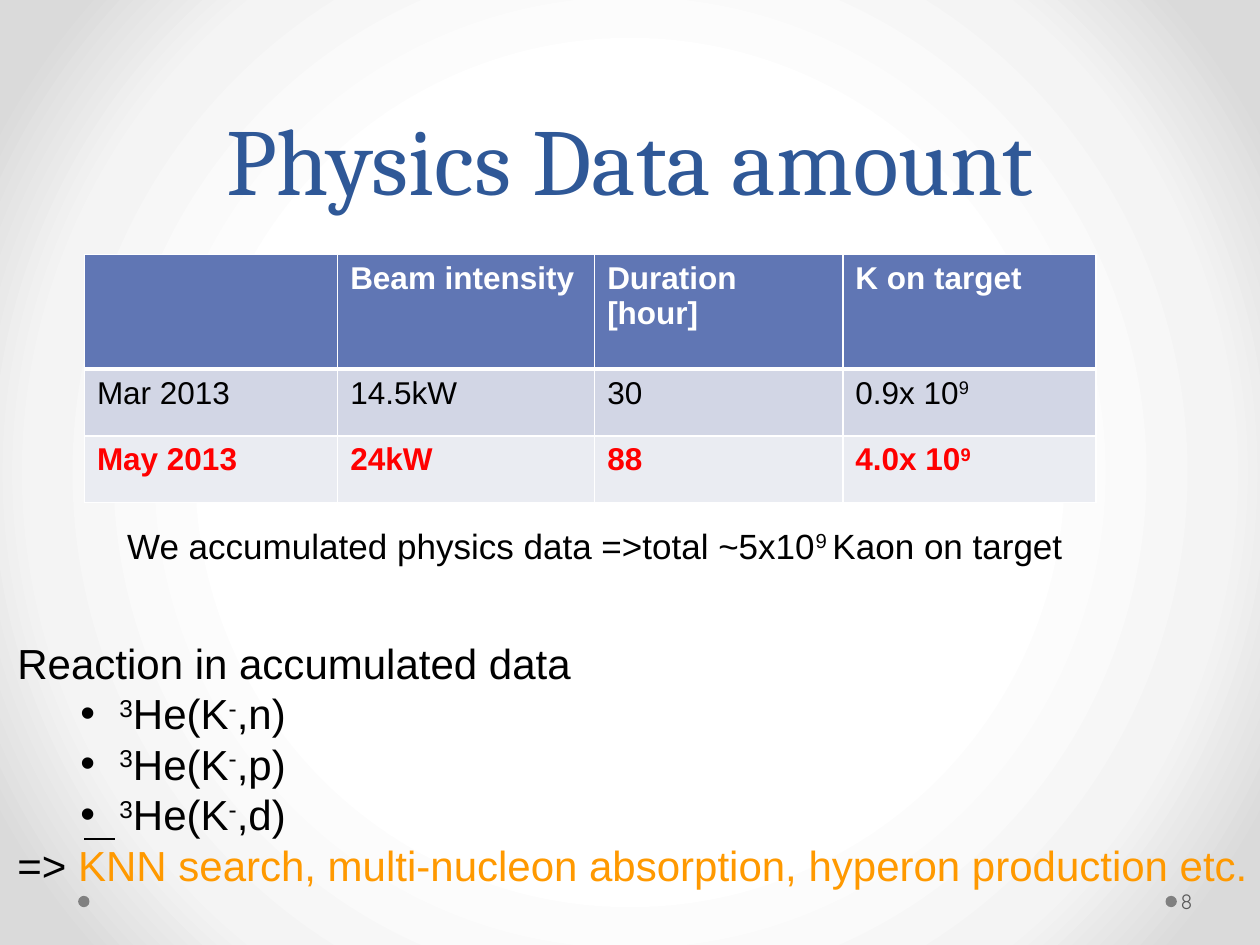
from lxml import etree
from pptx import Presentation
from pptx import util as u
from pptx.dml.color import RGBColor
from pptx.enum import shapes, text
from pptx.oxml import parse_xml
from pptx.oxml.ns import nsdecls, qn

Inches, Pt = u.Inches, u.Pt
HUE = {
    "title": "2F5897", "head": "6076B4", "odd": "D2D6E5", "even": "EAECF2",
    "white": "FFFFFF", "black": "000000", "red": "FF0000", "gold": "FF9900",
    "dot": "808080", "page": "595959", "mid": "F4F4F4", "edge": "DADADA",
}


def rgb(name):
    return RGBColor.from_string(HUE[name])


def write(para, words, size=18, font="Arial", hue="black", bold=False):
    """Add words to a paragraph; parts between ^ marks are superscript."""
    for i, part in enumerate(words.split("^")):
        if not part:
            continue
        run = para.add_run()
        run.text = part
        run.font.size, run.font.name, run.font.bold = Pt(size), font, bold
        run.font.color.rgb = rgb(hue)
        if i % 2:
            run._r.get_or_add_rPr().set("baseline", "30000")


def add_box(slide, left, top, width, height, wrap=False):
    box = slide.shapes.add_textbox(*map(Inches, (left, top, width, height)))
    frame = box.text_frame
    frame.word_wrap = wrap
    frame.auto_size = text.MSO_AUTO_SIZE.NONE if wrap else text.MSO_AUTO_SIZE.SHAPE_TO_FIT_TEXT
    return frame


def paint_back(slide):
    fill = slide.background.fill
    fill.gradient()
    stops = "".join(
        f'<a:gs pos="{pos}000"><a:srgbClr val="{HUE[name]}"/></a:gs>'
        for pos, name in ((50, "white"), (76, "mid"), (92, "edge")))
    new = parse_xml(
        f'<a:gradFill {nsdecls("a")} rotWithShape="1"><a:gsLst>{stops}</a:gsLst>'
        '<a:path path="circle"><a:fillToRect l="50000" t="50000" r="50000" b="50000"/>'
        '</a:path></a:gradFill>')
    old = next(slide._element.iter(qn("a:gradFill")))
    old.getparent().replace(old, new)


def add_dots(slide, top, size, lefts):
    for left in lefts:
        dot = slide.shapes.add_shape(
            shapes.MSO_SHAPE.OVAL, *map(Inches, (left, top, size, size)))
        dot.shadow.inherit = False
        dot.fill.solid()
        dot.fill.fore_color.rgb = rgb("dot")
        dot.line.fill.background()


def set_title(slide, words, left, top, width, height):
    title = slide.shapes.title
    title.left, title.top, title.width, title.height = map(
        Inches, (left, top, width, height))
    frame = title.text_frame
    frame.auto_size = text.MSO_AUTO_SIZE.NONE
    frame.vertical_anchor = text.MSO_ANCHOR.BOTTOM
    para = frame.paragraphs[0]
    para.alignment = text.PP_ALIGN.CENTER
    para.line_spacing = Pt(58)
    write(para, words, size=54, font="Cambria", hue="title")


def edge_cell(cell, base):
    """Draw white cell borders, with the bottom one base points wide."""
    props = cell._tc.get_or_add_tcPr()
    for i, (tag, wide) in enumerate((("lnL", 1), ("lnR", 1), ("lnT", 1), ("lnB", base))):
        props.insert(i, parse_xml(
            f'<a:{tag} {nsdecls("a")} w="{Pt(wide)}"><a:solidFill>'
            f'<a:srgbClr val="{HUE["white"]}"/></a:solidFill></a:{tag}>'))


def add_runs(slide, left, top, cols, rows):
    """Add the table of beam runs."""
    data = (
        ("", "Beam intensity", "Duration\n[hour]", "K on target"),
        ("Mar 2013", "14.5kW", "30", "0.9x 10^9^"),
        ("May 2013", "24kW", "88", "4.0x 10^9^"),
    )
    looks = (("head", "white", True), ("odd", "black", False), ("even", "red", True))
    table = slide.shapes.add_table(
        len(rows), len(cols), *map(Inches, (left, top, sum(cols), sum(rows)))).table
    for col, width in zip(table.columns, cols):
        col.width = Inches(width)
    for r, (row, high, (back, hue, bold)) in enumerate(zip(data, rows, looks)):
        table.rows[r].height = Inches(high)
        for c, words in enumerate(row):
            cell = table.cell(r, c)
            cell.fill.solid()
            cell.fill.fore_color.rgb = rgb(back)
            edge_cell(cell, 1 if r else 3)
            for i, line in enumerate(words.split("\n")):
                frame = cell.text_frame
                para = frame.add_paragraph() if i else frame.paragraphs[0]
                write(para, line, hue=hue, bold=bold)


def add_list(slide, left, top, width, height):
    """Add the reactions, the outlook line and the bar over its K."""
    frame = add_box(slide, left, top, width, height)
    write(frame.paragraphs[0], "Reaction in accumulated data", size=24)
    for out in "npd":
        para = frame.add_paragraph()
        para.level = 1
        props = para._p.get_or_add_pPr()
        props.set("marL", str(Inches(0.81)))
        props.set("indent", str(Inches(-0.31)))
        etree.SubElement(props, qn("a:buFont")).set("typeface", "Arial")
        etree.SubElement(props, qn("a:buChar")).set("char", "•")
        write(para, f"^3^He(K^-^,{out})", size=24)
    last = frame.add_paragraph()
    write(last, "=> ", size=24)
    write(last, "KNN search, multi-nucleon absorption, hyperon production etc.",
          size=24, hue="gold")
    x, y = left + 0.63, top + 1.65
    bar = slide.shapes.add_connector(
        shapes.MSO_CONNECTOR.STRAIGHT, *map(Inches, (x, y, x + 0.24, y)))
    bar.line.color.rgb = rgb("black")
    bar.line.width = Pt(0.75)
    etree.SubElement(bar._element.spPr, qn("a:effectLst"))


def add_page(slide, left, top, width, height):
    frame = add_box(slide, left, top, width, height, wrap=True)
    frame.vertical_anchor = text.MSO_ANCHOR.MIDDLE
    frame.margin_left = Inches(0.03)
    frame.margin_right = Inches(0.05)
    write(frame.paragraphs[0], "8", size=12, font="Quicksand", hue="page")


def main():
    deck = Presentation()
    deck.slide_width, deck.slide_height = Inches(10), Inches(7.5)
    slide = deck.slides.add_slide(deck.slide_layouts[5])
    paint_back(slide)
    add_dots(slide, 7.11, 0.09, (9.25, 0.62))
    set_title(slide, "Physics Data amount", 0.5, 0, 9, 1.75)
    add_runs(slide, 0.67, 2.02, (2.01, 2.04, 1.97, 2.01), (0.91, 0.53, 0.53))
    add_page(slide, 9.34, 6.95, 0.61, 0.4)
    add_list(slide, 0.04, 5.01, 10.07, 2.12)
    total = add_box(slide, 0.91, 4.11, 7.72, 0.44)
    write(total.paragraphs[0],
          "We accumulated physics data =>total ~5x10^9 ^Kaon on target", size=20)
    deck.save("out.pptx")


if __name__ == "__main__":
    main()
